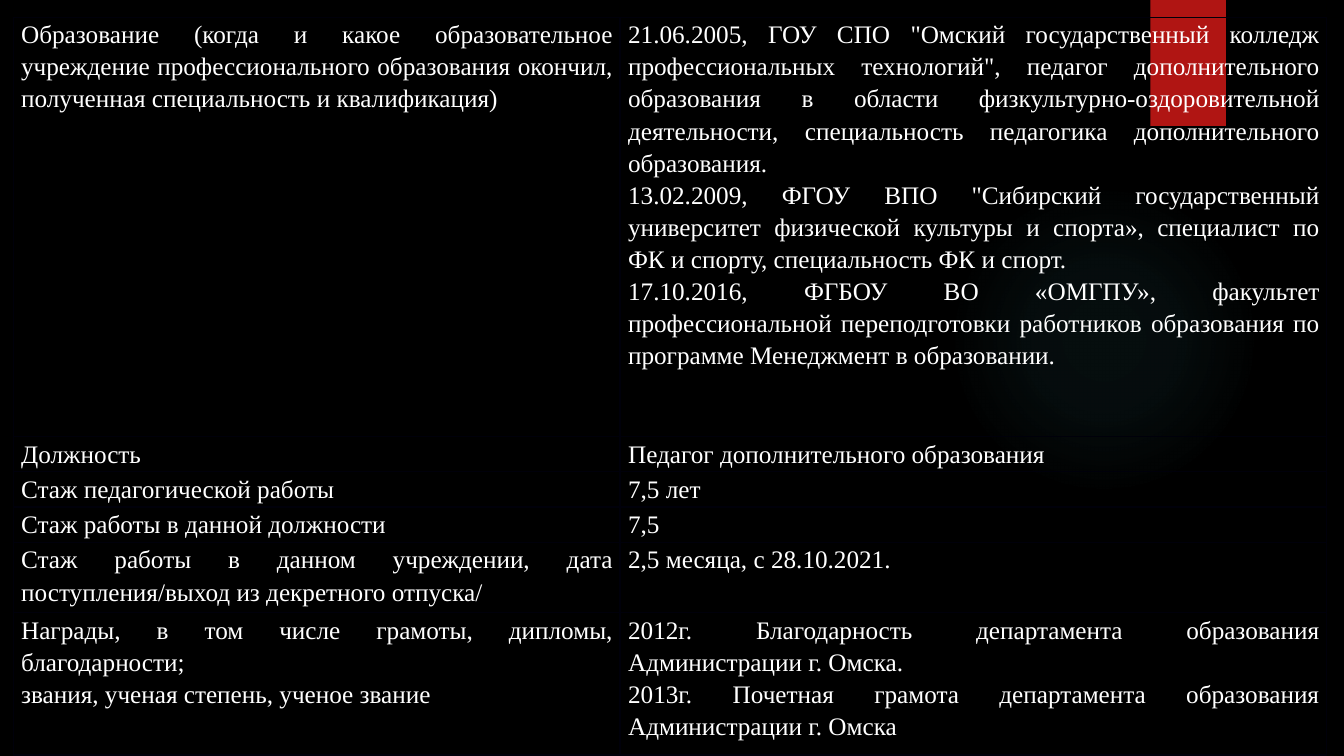
from lxml import etree
from pptx import Presentation
from pptx.dml.color import RGBColor
from pptx.enum.shapes import MSO_SHAPE as Shape
from pptx.enum.text import PP_ALIGN as Align
from pptx.oxml import parse_xml
from pptx.oxml.ns import nsdecls, qn
from pptx.util import Inches, Pt

BLACK = RGBColor(0x00, 0x00, 0x00)
WHITE = RGBColor(0xFF, 0xFF, 0xFF)
RED = RGBColor(0xB0, 0x15, 0x13)
TEAL = RGBColor(0x50, 0xB9, 0xC1)
BORDER = RGBColor(0x00, 0x00, 0x0A)
FONT = "Times New Roman"

COLUMN_WIDTHS = (6.02, 7.01)
ROW_HEIGHTS = (4.16, 0.35, 0.35, 0.35, 0.7, 1.41)

# Each row: label and value, one line per paragraph
RECORD = (
    ("Образование (когда и какое образовательное учреждение профессионального "
     "образования окончил, полученная специальность и квалификация)",
     "21.06.2005, ГОУ СПО \"Омский государственный колледж профессиональных "
     "технологий\", педагог дополнительного образования в области "
     "физкультурно-оздоровительной деятельности, специальность педагогика "
     "дополнительного образования.\n"
     "13.02.2009, ФГОУ ВПО \"Сибирский государственный университет физической "
     "культуры и спорта», специалист по ФК и спорту, специальность ФК и спорт.\n"
     "17.10.2016, ФГБОУ ВО «ОМГПУ», факультет профессиональной переподготовки "
     "работников образования по программе Менеджмент в образовании."),
    ("Должность", "Педагог дополнительного образования"),
    ("Стаж педагогической работы", "7,5 лет"),
    ("Стаж работы в данной должности", "7,5"),
    ("Стаж работы в данном учреждении, дата поступления/выход из декретного отпуска/",
     "2,5 месяца, с 28.10.2021."),
    ("Награды, в том числе грамоты, дипломы, благодарности;\n"
     "звания, ученая степень, ученое звание",
     "2012г. Благодарность департамента образования Администрации г. Омска.\n"
     "2013г. Почетная грамота департамента образования Администрации г. Омска"),
)


def add_plain_shape(page, kind, box, color):
    shape = page.shapes.add_shape(kind, *map(Inches, box))
    shape.shadow.inherit = False
    shape.fill.solid()
    shape.fill.fore_color.rgb = color
    shape.line.fill.background()
    return shape


def add_glow(page, box):
    glow = add_plain_shape(page, Shape.OVAL, box, TEAL)
    stops = "".join(
        f'<a:gs pos="{position * 1000}"><a:srgbClr val="{TEAL}">'
        f'<a:alpha val="{alpha * 1000}"/></a:srgbClr></a:gs>'
        for position, alpha in ((0, 7), (36, 6), (69, 0)))
    gradient = parse_xml(
        f'<a:gradFill {nsdecls("a")}><a:gsLst>{stops}</a:gsLst><a:path path="circle">'
        '<a:fillToRect l="50000" t="50000" r="50000" b="50000"/></a:path></a:gradFill>')
    properties = glow._element.spPr
    properties.replace(properties.find(qn("a:solidFill")), gradient)


def add_borders(cell):
    properties = cell._tc.get_or_add_tcPr()
    for index, side in enumerate(("lnL", "lnR", "lnT", "lnB")):
        line = etree.Element(qn(f"a:{side}"), w=str(Pt(1)))
        fill = etree.SubElement(line, qn("a:solidFill"))
        etree.SubElement(fill, qn("a:srgbClr"), val=str(BORDER))
        properties.insert(index, line)


def fill_cell(cell, text):
    cell.fill.background()
    add_borders(cell)
    cell.margin_left, cell.margin_right = Inches(0.08), Inches(0.07)
    cell.margin_top = cell.margin_bottom = 0
    cell.text = text
    for para in cell.text_frame.paragraphs:
        para.alignment = Align.JUSTIFY
        para.line_spacing = 1.15
        para.font.name = FONT
        para.font.size = Pt(18)
        para.font.color.rgb = WHITE


def add_record_table(page, box):
    frame = page.shapes.add_table(len(ROW_HEIGHTS), len(COLUMN_WIDTHS), *map(Inches, box))
    table = frame.table
    table.first_row = table.horz_banding = False
    for column, width in zip(table.columns, COLUMN_WIDTHS):
        column.width = Inches(width)
    for row, height, texts in zip(table.rows, ROW_HEIGHTS, RECORD):
        row.height = Inches(height)
        for cell, text in zip(row.cells, texts):
            fill_cell(cell, text)


def main():
    deck = Presentation()
    deck.slide_width, deck.slide_height = Inches(13.33), Inches(7.5)
    page = deck.slides.add_slide(deck.slide_layouts[6])
    page.background.fill.solid()
    page.background.fill.fore_color.rgb = BLACK

    # Backdrop: soft glow and red bookmark
    add_glow(page, (9.41, 1.83, 3.08, 3.08))
    add_plain_shape(page, Shape.RECTANGLE, (11.41, 0, 0.75, 1.25), RED)

    # Teacher's record
    add_record_table(page, (0.13, 0.17, sum(COLUMN_WIDTHS), sum(ROW_HEIGHTS)))
    deck.save("out.pptx")


if __name__ == "__main__":
    main()
